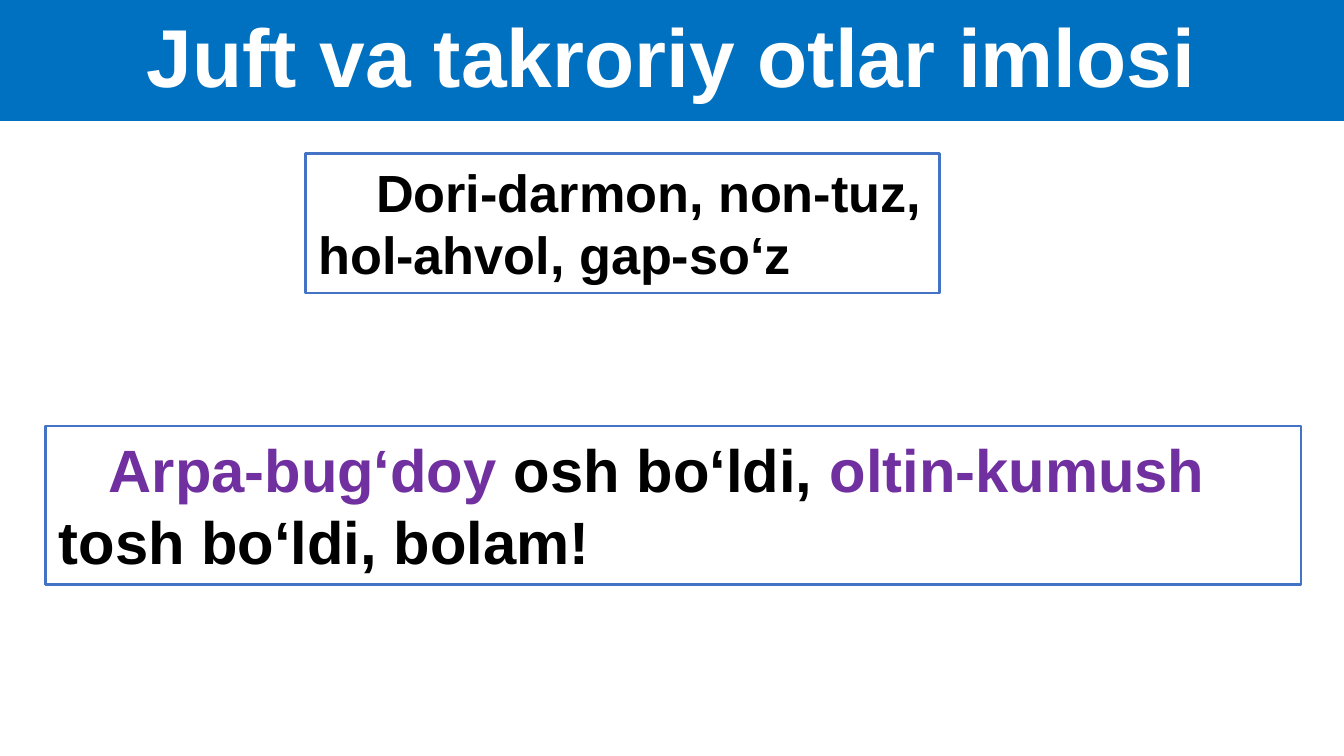
"""Builds a slide on the spelling of paired and repeated nouns in Uzbek."""
from pptx import Presentation
from pptx import util as u
from pptx.dml.color import RGBColor
from pptx.enum import shapes, text

COLORS = {
    "banner": "0070C0",
    "white": "FFFFFF",
    "border": "4472C4",
    "black": "000000",
    "accent": "7030A0",
}
WIDTH = 10
HEIGHT = WIDTH * 9 / 16


def rgb(name):
    return RGBColor.from_string(COLORS[name])


def add_text(paragraph, wording, size=28, color="black", bold=True, font="Arial"):
    run = paragraph.add_run()
    run.text = wording
    run.font.name = font
    run.font.size = u.Pt(size)
    run.font.bold = bold
    run.font.color.rgb = rgb(color)


class SlideBuilder:
    def __init__(self, slide):
        self.slide = slide

    def title(self, wording, width, height):
        banner = self.slide.shapes.title
        banner.left, banner.top = u.Inches(0), u.Inches(0)
        banner.width, banner.height = u.Inches(width), u.Inches(height)
        banner.fill.solid()
        banner.fill.fore_color.rgb = rgb("banner")
        banner.text_frame.vertical_anchor = text.MSO_ANCHOR.MIDDLE
        heading = banner.text_frame.paragraphs[0]
        heading.alignment = text.PP_ALIGN.CENTER
        heading.line_spacing = 0.9
        add_text(heading, wording, size=44, color="white")

    def example(self, place, phrases, size, indent):
        frame = self.slide.shapes.add_shape(
            shapes.MSO_SHAPE.RECTANGLE, *map(u.Inches, place))
        frame.shadow.inherit = False
        frame.fill.solid()
        frame.fill.fore_color.rgb = rgb("white")
        frame.line.color.rgb = rgb("border")
        frame.line.width = u.Pt(1.5)
        body = frame.text_frame
        body.word_wrap = True
        body.auto_size = text.MSO_AUTO_SIZE.SHAPE_TO_FIT_TEXT
        body.vertical_anchor = text.MSO_ANCHOR.TOP
        sentence = body.paragraphs[0]
        sentence.alignment = text.PP_ALIGN.LEFT
        sentence._p.get_or_add_pPr().set("indent", str(u.Inches(indent)))
        for wording, color in phrases:
            add_text(sentence, wording, size=size, color=color)


def main():
    deck = Presentation()
    deck.slide_width, deck.slide_height = u.Inches(WIDTH), u.Inches(HEIGHT)
    builder = SlideBuilder(deck.slides.add_slide(deck.slide_layouts[5]))
    builder.title("Juft va takroriy otlar imlosi", WIDTH, 0.9)
    builder.example(
        (2.27, 1.14, 4.72, 1.04),
        [("Dori-darmon, non-tuz, hol-ahvol, gap-so‘z", "black")],
        size=28, indent=0.43)
    builder.example(
        (0.34, 3.17, 9.34, 1.18),
        [("Arpa-bug‘doy ", "accent"), ("osh bo‘ldi, ", "black"),
         ("oltin-kumush ", "accent"), ("tosh bo‘ldi, bolam!", "black")],
        size=32, indent=0.37)
    deck.save("out.pptx")


if __name__ == "__main__":
    main()
